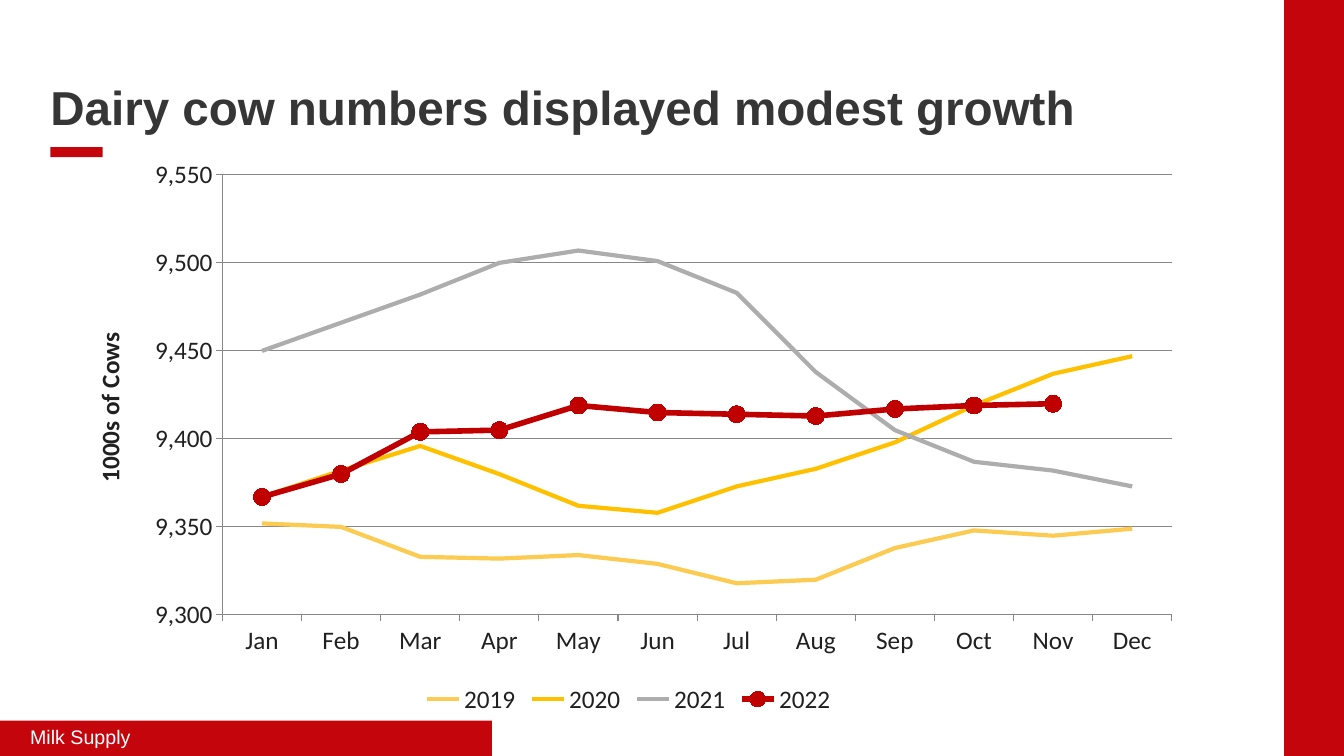
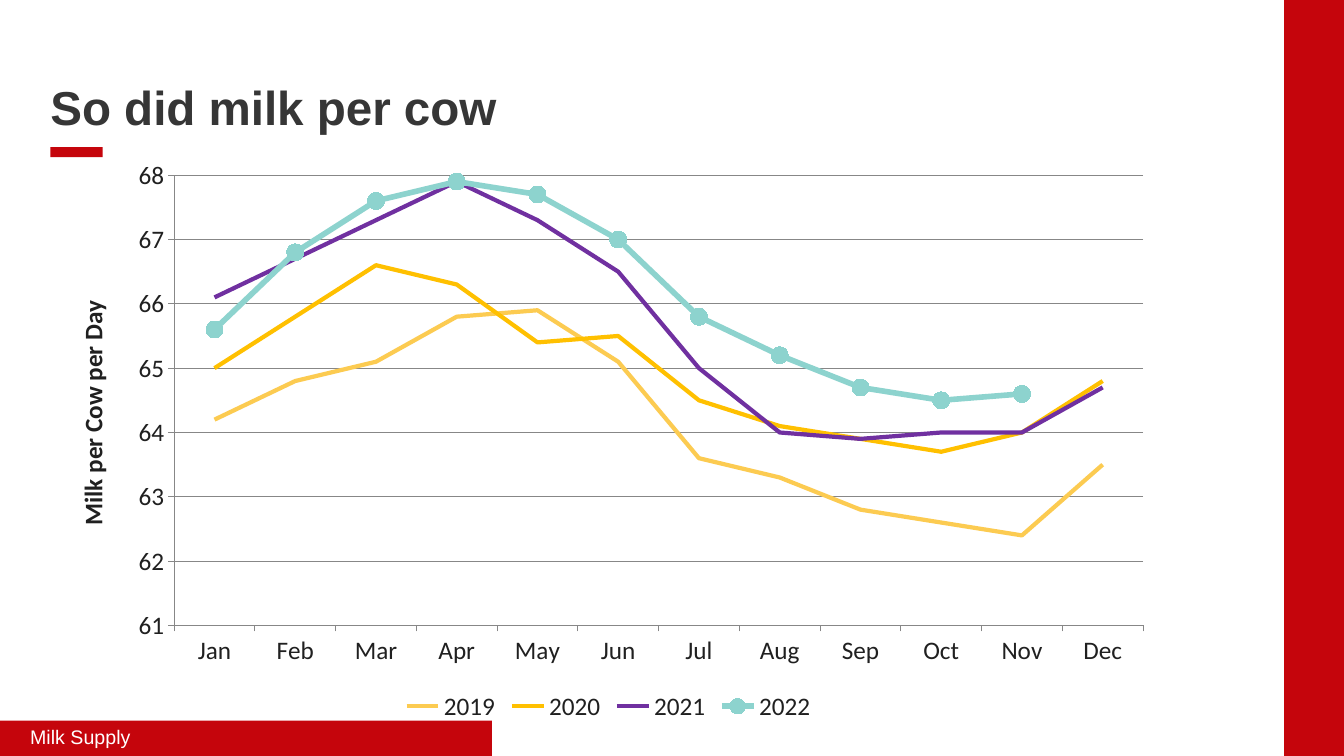
"""Builds two dairy supply slides, each with a line chart by month and year."""
from lxml import etree
from pptx import Presentation
from pptx.chart.data import CategoryChartData
from pptx.dml.color import RGBColor
from pptx.enum.chart import XL_CHART_TYPE, XL_LEGEND_POSITION, XL_MARKER_STYLE, XL_TICK_MARK
from pptx.enum.shapes import MSO_SHAPE
from pptx.enum.text import MSO_ANCHOR, MSO_AUTO_SIZE, PP_ALIGN
from pptx.oxml.ns import qn
from pptx.util import Cm, Pt

RED = RGBColor(0xC5, 0x05, 0x0C)
DARK = RGBColor(0x36, 0x36, 0x36)
WHITE = RGBColor(0xFF, 0xFF, 0xFF)
INK = RGBColor(0x20, 0x20, 0x20)
GRID = RGBColor(0x87, 0x87, 0x87)
SAND = RGBColor(0xFC, 0xCB, 0x51)
AMBER = RGBColor(0xFF, 0xC0, 0x00)
GREY = RGBColor(0xAD, 0xAD, 0xAD)
CRIMSON = RGBColor(0xC0, 0x00, 0x00)
PURPLE = RGBColor(0x70, 0x30, 0xA0)
TEAL = RGBColor(0x8D, 0xD3, 0xCE)

FOOTER = "Milk Supply"
MONTHS = "Jan Feb Mar Apr May Jun Jul Aug Sep Oct Nov Dec".split()
CURRENT_YEAR = "2022"
SLIDES = [
    {
        "title": "Dairy cow numbers displayed modest growth",
        "axis": "1000s of Cows",
        "scale": (9300, 9550, 50),
        "format": "#,##0",
        "box": (2.01, 3.91, 27.66, 14.22),
        "plot": (0.13, 0.035, 0.865, 0.78),
        "series": [
            ("2019", SAND, (9352, 9350, 9333, 9332, 9334, 9329, 9318, 9320, 9338, 9348, 9345, 9349)),
            ("2020", AMBER, (9367, 9382, 9396, 9380, 9362, 9358, 9373, 9383, 9398, 9419, 9437, 9447)),
            ("2021", GREY, (9450, 9466, 9482, 9500, 9507, 9501, 9483, 9438, 9405, 9387, 9382, 9373)),
            ("2022", CRIMSON, (9367, 9380, 9404, 9405, 9419, 9415, 9414, 9413, 9417, 9419, 9420, None)),
        ],
    },
    {
        "title": "So did milk per cow",
        "axis": "Milk per Cow per Day",
        "scale": (61, 68, 1),
        "format": "0",
        "box": (1.3, 3.76, 28.07, 14.55),
        "plot": (0.11, 0.045, 0.87, 0.78),
        "series": [
            ("2019", SAND, (64.2, 64.8, 65.1, 65.8, 65.9, 65.1, 63.6, 63.3, 62.8, 62.6, 62.4, 63.5)),
            ("2020", AMBER, (65, 65.8, 66.6, 66.3, 65.4, 65.5, 64.5, 64.1, 63.9, 63.7, 64, 64.8)),
            ("2021", PURPLE, (66.1, 66.7, 67.3, 67.9, 67.3, 66.5, 65, 64, 63.9, 64, 64, 64.7)),
            ("2022", TEAL, (65.6, 66.8, 67.6, 67.9, 67.7, 67, 65.8, 65.2, 64.7, 64.5, 64.6, None)),
        ],
    },
]


def set_font(font, name, size, color, bold=False):
    font.name, font.size, font.bold = name, Pt(size), bold
    font.color.rgb = color


def add_band(slide, *box):
    sp = slide.shapes.add_shape(MSO_SHAPE.RECTANGLE, *map(Cm, box))
    sp.shadow.inherit = False
    sp.fill.solid()
    sp.fill.fore_color.rgb = RED
    sp.line.fill.background()
    return sp


def write(tf, text, anchor, margins, size, color, bold=False):
    tf.auto_size = MSO_AUTO_SIZE.NONE
    tf.vertical_anchor = anchor
    tf.margin_left, tf.margin_top, tf.margin_right, tf.margin_bottom = map(Cm, margins)
    p = tf.paragraphs[0]
    p.alignment = PP_ALIGN.LEFT
    p.line_spacing = 0.9
    r = p.add_run()
    r.text = text
    set_font(r.font, "Arial", size, color, bold)


def add_frame(slide, title):
    add_band(slide, 32.36, 0, 1.51, 19.05)
    add_band(slide, 1.27, 3.71, 1.32, 0.25)
    sp = slide.shapes.title
    sp.left, sp.top, sp.width, sp.height = map(Cm, (1.27, 1.96, 30.28, 1.45))
    write(sp.text_frame, title, MSO_ANCHOR.BOTTOM, (0, 0.13, 0.25, 0), 34, DARK, True)
    footer = add_band(slide, 0, 18.16, 12.4, 0.89)
    write(footer.text_frame, FOOTER, MSO_ANCHOR.MIDDLE, (0.76, 0.18, 0.76, 0.18), 14, WHITE)


def place_plot(chart, plot):
    area = chart.element.find(".//" + qn("c:plotArea"))
    for old in area.findall(qn("c:layout")):
        area.remove(old)
    layout = etree.Element(qn("c:layout"))
    area.insert(0, layout)
    manual = etree.SubElement(layout, qn("c:manualLayout"))
    settings = [("layoutTarget", "inner"), ("xMode", "edge"), ("yMode", "edge")]
    for tag, val in settings + list(zip("xywh", plot)):
        etree.SubElement(manual, qn("c:" + tag)).set("val", str(val))


def style_axes(chart, item):
    value = chart.value_axis
    value.minimum_scale, value.maximum_scale, value.major_unit = item["scale"]
    value.has_major_gridlines = True
    value.tick_labels.number_format = item["format"]
    value.tick_labels.number_format_is_linked = False
    for axis in (value, chart.category_axis):
        axis.major_tick_mark = XL_TICK_MARK.OUTSIDE
        axis.minor_tick_mark = XL_TICK_MARK.NONE
    for part in (value, chart.category_axis, value.major_gridlines):
        part.format.line.color.rgb = GRID
        part.format.line.width = Pt(0.75)
    r = value.axis_title.text_frame.paragraphs[0].add_run()
    r.text = item["axis"]
    set_font(r.font, "Calibri", 18, INK, True)


def style_series(series, color):
    current = series.name == CURRENT_YEAR
    series.smooth = False
    series.format.line.color.rgb = color
    series.format.line.width = Pt(4 if current else 3)
    marker = series.marker
    marker.style = XL_MARKER_STYLE.CIRCLE if current else XL_MARKER_STYLE.NONE
    if current:
        marker.size = 12
        marker.format.fill.solid()
        marker.format.fill.fore_color.rgb = color
        marker.format.line.color.rgb = color


def add_line_chart(slide, item):
    data = CategoryChartData()
    data.categories = MONTHS
    for name, _, values in item["series"]:
        data.add_series(name, values)
    kind = XL_CHART_TYPE.LINE_MARKERS
    chart = slide.shapes.add_chart(kind, *map(Cm, item["box"]), data).chart
    chart.has_title = False
    set_font(chart.font, "Calibri", 18, INK)
    chart.has_legend = True
    chart.legend.position = XL_LEGEND_POSITION.BOTTOM
    chart.legend.include_in_layout = False
    chart.plots[0].vary_by_categories = False
    style_axes(chart, item)
    for series, (_, color, _) in zip(chart.plots[0].series, item["series"]):
        style_series(series, color)
    place_plot(chart, item["plot"])


def main():
    prs = Presentation()
    prs.slide_width, prs.slide_height = Cm(33.87), Cm(19.05)
    for item in SLIDES:
        slide = prs.slides.add_slide(prs.slide_layouts[5])
        add_frame(slide, item["title"])
        add_line_chart(slide, item)
    prs.save("out.pptx")


if __name__ == "__main__":
    main()
